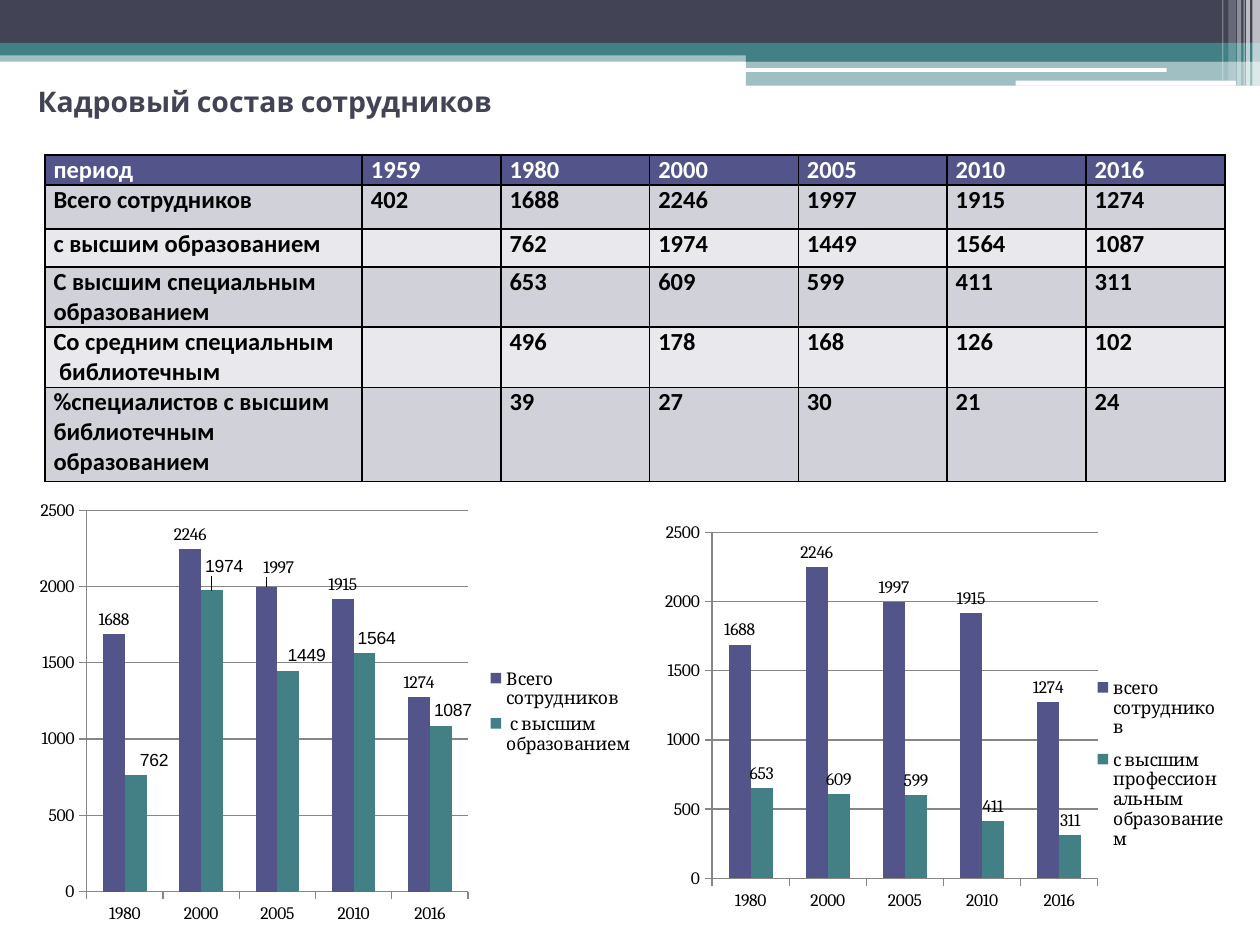
"""Build a staffing slide with a table and two column charts."""
from lxml import etree
from pptx import Presentation
from pptx.chart import data
from pptx.dml import color
from pptx.enum import chart as charts, shapes, text
from pptx.oxml import ns, parse_xml
from pptx.util import Pt

THEME = dict(
    navy="424456", teal="438086", violet="53548A", white="FFFFFF", black="000000",
    grid="868686", rows=("D1D1DA", "E9E9ED"),
    title=dict(name="Cabin", size=Pt(16.2), bold=True),
    table=dict(name="Calibri", size=Pt(14), bold=True),
    chart=dict(name="Cambria", size=Pt(10)),
    moved=dict(name="Arial", size=Pt(10)),
)

# left, top, width, height, colour, opacity in percent
BANDS = [
    (0, 28.8, 720, 6.5, "teal", 50),
    (0, 0, 720, 24.5, "navy", 100),
    (0, 24.5, 720, 7.2, "teal", 100),
    (426.2, 28.1, 293.8, 7.2, "teal", 100),
    (426.2, 34.6, 293.8, 14.4, "teal", 50),
]
BARS = [(425.5, 38.9, 241.2, 2.2, "white", 100), (580.3, 46.1, 126, 2.9, "white", 100)]
STRIPES = [
    (715.7, 0, 4.3, 49, "white", 65),
    (712.1, 0, 2.2, 49, "white", 65),
    (710.6, 0, 0.7, 49, "white", 60),
    (707, 0, 2.2, 49, "white", 40),
    (702, 0, 4.3, 46.1, "white", 20),
    (698.4, 0, 0.7, 46.1, "white", 30),
]

TITLE = "Кадровый состав сотрудников"
TITLE_BOX = (14.4, 38.4, 686.2, 38.9)
TABLE_BOX = (25.6, 88.6, 674.6, 186.6)
COLUMNS = [181.4, 79.2, 85, 85, 85, 79.4, 79.6]
HEIGHTS = [17.2, 25.2, 21.6, 34.2, 34.5, 53.9]
ROWS = [
    ("период", "1959", "1980", "2000", "2005", "2010", "2016"),
    ("Всего сотрудников", "402", "1688", "2246", "1997", "1915", "1274"),
    ("с высшим образованием", "", "762", "1974", "1449", "1564", "1087"),
    ("С высшим специальным образованием", "", "653", "609", "599", "411", "311"),
    ("Со средним специальным\n библиотечным", "", "496", "178", "168", "126", "102"),
    ("%специалистов с высшим библиотечным образованием", "", "39", "27", "30", "21", "24"),
]

# moved: series, point, then shift right and down as shares of the chart
CHARTS = [
    dict(
        box=(14.4, 281.5, 351.4, 250.6), plot=(0.1, 0.04, 0.62, 0.87),
        legend=(0.75, 0.39, 0.24, 0.22),
        series=[("Всего сотрудников", 1), (" с высшим образованием", 2)],
        moved=[(0, 2, 0.02, -0.01), (1, 0, 0.03, 0), (1, 1, 0.02, -0.02),
               (1, 2, 0.03, 0), (1, 3, 0.02, 0), (1, 4, 0.02, 0)],
    ),
    dict(
        box=(377.3, 292.3, 329, 238.3), plot=(0.09, 0.05, 0.67, 0.83),
        legend=(0.77, 0.37, 0.22, 0.47),
        series=[("всего сотрудников", 1), ("с высшим профессиональным образованием", 3)],
        moved=[],
    ),
]
NO_LEADERS = (
    f'<c:extLst {ns.nsdecls("c")}><c:ext uri="{{CE6537A1-D6FC-4f65-9D91-7224C49458BB}}" '
    'xmlns:c15="http://schemas.microsoft.com/office/drawing/2012/chart">'
    '<c15:showLeaderLines val="0"/></c:ext></c:extLst>'
)


def rgb(name):
    return color.RGBColor.from_string(THEME.get(name, name))


def set_font(font, style, colour):
    for key, value in THEME[style].items():
        setattr(font, key, value)
    font.color.rgb = rgb(colour)


def paint(fill, colour):
    fill.solid()
    fill.fore_color.rgb = rgb(colour)


def add_band(slide, kind, band):
    *box, colour, opacity = band
    shape = slide.shapes.add_shape(kind, *map(Pt, box))
    shape.shadow.inherit = False
    shape.line.fill.background()
    paint(shape.fill, colour)
    if opacity < 100:
        fill_colour = shape.fill._xPr.find(".//" + ns.qn("a:srgbClr"))
        etree.SubElement(fill_colour, ns.qn("a:alpha"), val=str(opacity * 1000))


def add_title(slide):
    frame = slide.shapes.add_textbox(*map(Pt, TITLE_BOX)).text_frame
    frame.word_wrap = True
    frame.vertical_anchor = text.MSO_ANCHOR.MIDDLE
    run = frame.paragraphs[0].add_run()
    run.text = TITLE
    set_font(run.font, "title", "navy")


def add_borders(cell):
    properties = cell._tc.get_or_add_tcPr()
    for side in ("lnL", "lnR", "lnT", "lnB"):
        line = etree.SubElement(properties, ns.qn(f"a:{side}"), w=str(Pt(1)))
        fill = etree.SubElement(line, ns.qn("a:solidFill"))
        etree.SubElement(fill, ns.qn("a:srgbClr"), val=THEME["black"])


def add_staff_table(slide):
    table = slide.shapes.add_table(len(ROWS), len(COLUMNS), *map(Pt, TABLE_BOX)).table
    for column, width in zip(table.columns, COLUMNS):
        column.width = Pt(width)
    margins = dict(margin_left=Pt(5), margin_right=Pt(5), margin_top=0, margin_bottom=0)
    for index, values in enumerate(ROWS):
        table.rows[index].height = Pt(HEIGHTS[index])
        background = THEME["rows"][(index - 1) % 2] if index else "violet"
        for cell, value in zip(table.rows[index].cells, values):
            for key, margin in margins.items():
                setattr(cell, key, margin)
            add_borders(cell)
            paint(cell.fill, background)
            cell.text = value
            for paragraph in cell.text_frame.paragraphs:
                for run in paragraph.runs or [paragraph.add_run()]:
                    set_font(run.font, "table", "black" if index else "white")


def layout_xml(values, prefix=""):
    parts = prefix + "".join(f'<c:{key} val="{value}"/>' for key, value in zip("xywh", values))
    return parse_xml(f'<c:layout {ns.nsdecls("c")}><c:manualLayout>{parts}</c:manualLayout></c:layout>')


def place(element, index, values, target=""):
    for old in element.findall(ns.qn("c:layout")):
        element.remove(old)
    edges = '<c:xMode val="edge"/><c:yMode val="edge"/>'
    element.insert(index, layout_xml(values, target + edges))


def label_series(columns, moved):
    for item, colour in zip(columns.series, ("violet", "teal")):
        paint(item.format.fill, colour)
        labels = item.data_labels
        labels.show_value = True
        labels.position = charts.XL_LABEL_POSITION.OUTSIDE_END
        set_font(labels.font, "chart", "black")
    for series_index, point, right, down in moved:
        label = columns.series[series_index].points[point].data_label
        set_font(label.font, "moved" if series_index else "chart", "black")
        label.position = charts.XL_LABEL_POSITION.OUTSIDE_END
        label._dLbl.insert(1, layout_xml((right, down)))
    for item in columns.series:
        item.data_labels._element.append(parse_xml(NO_LEADERS))


def add_column_chart(slide, box, plot, legend, series, moved):
    chart_data = data.CategoryChartData()
    chart_data.categories = ROWS[0][2:]
    for name, row in series:
        chart_data.add_series(name, [int(value) for value in ROWS[row][2:]])
    chart = slide.shapes.add_chart(
        charts.XL_CHART_TYPE.COLUMN_CLUSTERED, *map(Pt, box), chart_data).chart
    set_font(chart.font, "chart", "black")
    chart.has_title = False
    chart.has_legend = True
    chart.legend.position = charts.XL_LEGEND_POSITION.RIGHT
    chart.legend.include_in_layout = False
    columns = chart.plots[0]
    for key, value in dict(gap_width=150, overlap=0, vary_by_categories=False).items():
        setattr(columns, key, value)
    chart.value_axis.has_major_gridlines = True
    for part in (chart.value_axis, chart.category_axis, chart.value_axis.major_gridlines):
        part.format.line.color.rgb = rgb("grid")
        part.format.line.width = Pt(0.75)
    label_series(columns, moved)
    place(chart._chartSpace.chart.plotArea, 0, plot, '<c:layoutTarget val="inner"/>')
    place(chart.legend._element, 1, legend)


def main():
    presentation = Presentation()
    presentation.slide_width, presentation.slide_height = Pt(720), Pt(540)
    slide = presentation.slides.add_slide(presentation.slide_layouts[6])
    kinds = shapes.MSO_SHAPE
    for kind, bands in ((kinds.RECTANGLE, BANDS), (kinds.ROUNDED_RECTANGLE, BARS),
                        (kinds.RECTANGLE, STRIPES)):
        for band in bands:
            add_band(slide, kind, band)
    add_title(slide)
    add_staff_table(slide)
    for chart in CHARTS:
        add_column_chart(slide, **chart)
    presentation.save("out.pptx")


if __name__ == "__main__":
    main()
